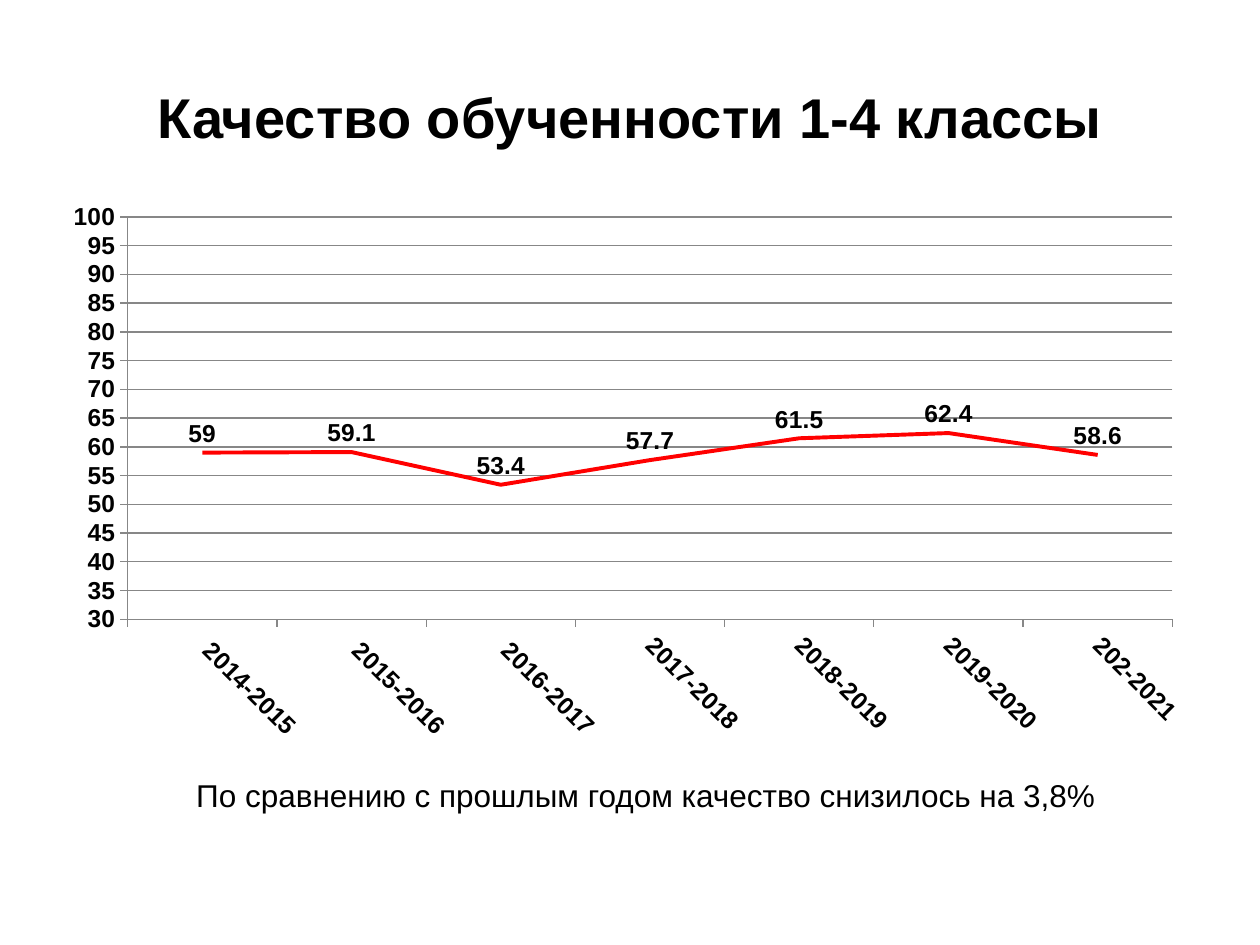
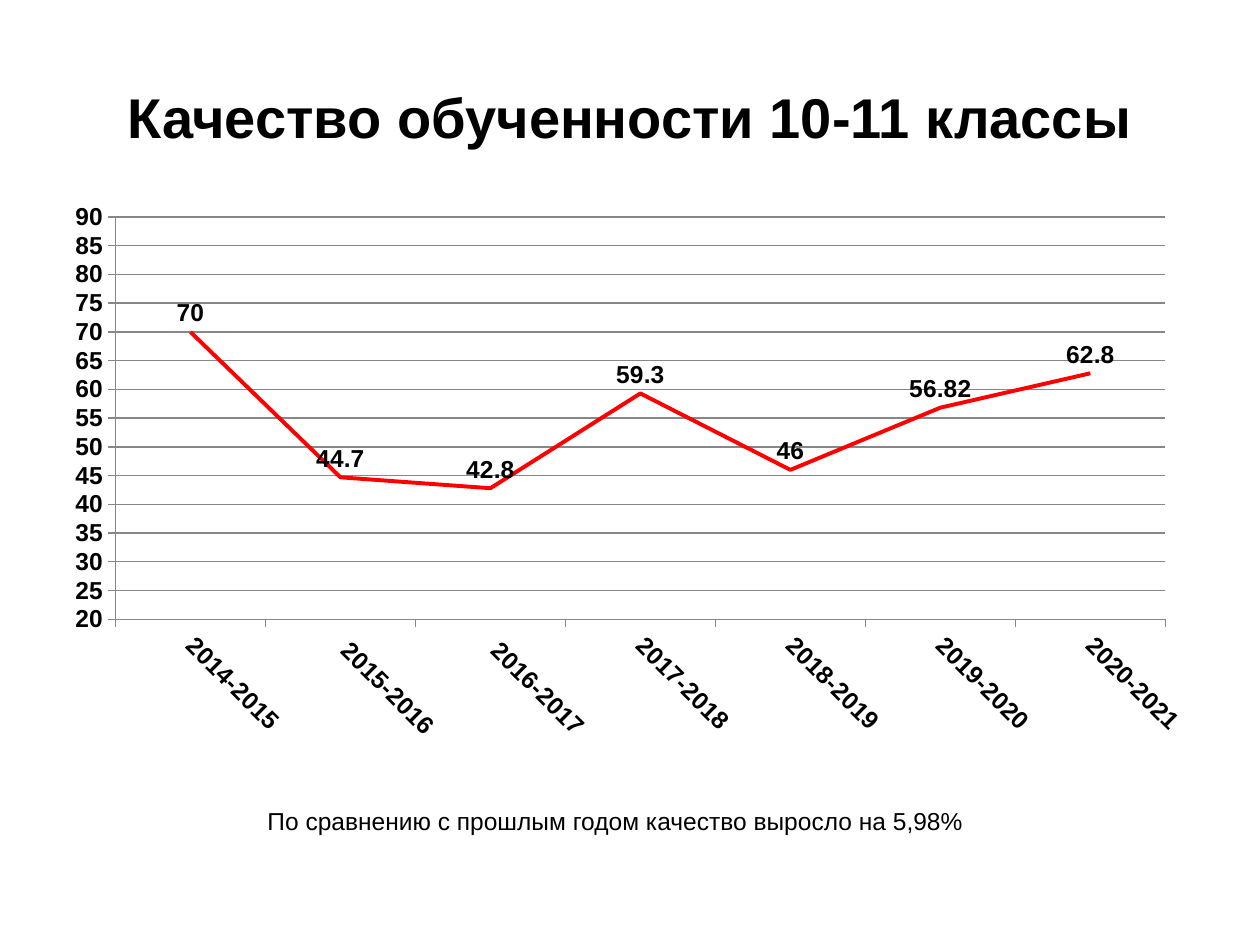
import lxml.etree
import pptx
import pptx.chart.data
import pptx.dml.color
import pptx.enum.chart
import pptx.enum.text
import pptx.oxml
import pptx.oxml.ns
import pptx.util

Pt = pptx.util.Pt
Align = pptx.enum.text.PP_ALIGN
Anchor = pptx.enum.text.MSO_ANCHOR
ChartEnum = pptx.enum.chart

FONT = "Arial"
BLACK, RED, GREY = "000000", "FF0000", "878787"
TITLE_BOX = (36, 21.6, 648, 90)
CHART_BOX = (30, 110, 660, 320)
AXIS_STEP = 5

SLIDES = [
    {
        "title": "Качество обученности 1-4 классы",
        "years": [" 2014-2015", " 2015-2016", " 2016-2017", "2017-2018",
                  "2018-2019", "2019-2020", "202-2021"],
        "quality": [59, 59.1, 53.4, 57.7, 61.5, 62.4, 58.6],
        "scale": (30, 100),
        "plot": (43, 14, 597, 230),
        "note": "По сравнению с прошлым годом качество снизилось на 3,8%",
        "note_box": (105, 440, 536, 73),
        "note_size": 18,
        "note_align": Align.LEFT,
    },
    {
        "title": "Качество обученности 10-11 классы",
        "years": ["2014-2015", " 2015-2016", " 2016-2017", "2017-2018",
                  "2018-2019", "2019-2020", "2020-2021"],
        "quality": [70, 44.7, 42.8, 59.3, 46, 56.82, 62.8],
        "scale": (20, 90),
        "plot": (36, 14, 600, 230),
        "note": "По сравнению с прошлым годом качество выросло на 5,98%",
        "note_box": (121.7, 457.2, 460, 37.4),
        "note_size": 14,
        "note_align": Align.CENTER,
    },
]


def color(value):
    """Turn a hex string into a colour."""
    return pptx.dml.color.RGBColor.from_string(value)


def apply(target, values):
    """Set the attributes of an object from a dict."""
    for name, value in values.items():
        setattr(target, name, value)


def style_font(font, size, bold=False):
    """Give a font the shared face and colour."""
    apply(font, {"name": FONT, "size": Pt(size), "bold": bold})
    font.color.rgb = color(BLACK)


def style_line(line, value, width):
    """Set the colour and width of a line."""
    line.color.rgb = color(value)
    line.width = Pt(width)


def add_text(page, box, text, size, align, bold=False, anchor=Anchor.TOP):
    """Place one paragraph of text in a box."""
    frame = page.shapes.add_textbox(*map(Pt, box)).text_frame
    apply(frame, {"word_wrap": True, "vertical_anchor": anchor})
    para = frame.paragraphs[0]
    para.alignment = align
    span = para.add_run()
    span.text = text
    style_font(span.font, size, bold)


def place_plot(chart, box, plot_box):
    """Fix the inner plot area, given in points within the chart box."""
    area = chart._chartSpace.chart.plotArea
    for old in area.findall(pptx.oxml.ns.qn("c:layout")):
        area.remove(old)
    layout = lxml.etree.Element(pptx.oxml.ns.qn("c:layout"))
    manual = lxml.etree.SubElement(layout, pptx.oxml.ns.qn("c:manualLayout"))
    left, top, width, height = plot_box
    settings = {
        "layoutTarget": "inner", "xMode": "edge", "yMode": "edge",
        "x": left / box[2], "y": top / box[3],
        "w": width / box[2], "h": height / box[3],
    }
    for name, value in settings.items():
        item = lxml.etree.SubElement(manual, pptx.oxml.ns.qn(f"c:{name}"))
        item.set("val", str(value))
    area.insert(0, layout)


def style_axes(chart, scale):
    """Format both axes, the gridlines and the slanted year labels."""
    low, high = scale
    years, values = chart.category_axis, chart.value_axis
    apply(values, {"minimum_scale": low, "maximum_scale": high,
                   "major_unit": AXIS_STEP, "has_major_gridlines": True})
    style_line(values.major_gridlines.format.line, GREY, 0.75)
    for axis in (years, values):
        axis.major_tick_mark = ChartEnum.XL_TICK_MARK.OUTSIDE
        style_font(axis.tick_labels.font, 14, True)
        style_line(axis.format.line, GREY, 0.75)
    slant = years._element.find(".//" + pptx.oxml.ns.qn("a:bodyPr"))
    slant.set("rot", "2700000")
    slant.set("vert", "horz")


def add_quality_chart(page, box, content):
    """Draw the line chart of quality by school year."""
    data = pptx.chart.data.CategoryChartData()
    data.categories = content["years"]
    data.add_series("Series 1", content["quality"])
    chart = page.shapes.add_chart(
        ChartEnum.XL_CHART_TYPE.LINE, *map(Pt, box), data).chart
    apply(chart, {"has_legend": False, "has_title": False})
    style_font(chart.font, 18)
    place_plot(chart, box, content["plot"])
    style_axes(chart, content["scale"])
    plot = chart.plots[0]
    plot.vary_by_categories = False
    series = plot.series[0]
    series.smooth = False
    series.marker.style = ChartEnum.XL_MARKER_STYLE.NONE
    style_line(series.format.line, RED, 2.25)
    labels = series.data_labels
    apply(labels, {"show_value": True,
                   "position": ChartEnum.XL_LABEL_POSITION.ABOVE})
    style_font(labels.font, 14, True)


def add_quality_slide(deck, content):
    """Add a slide with a title, a chart and a note."""
    page = deck.slides.add_slide(deck.slide_layouts[6])
    add_quality_chart(page, CHART_BOX, content)
    add_text(page, TITLE_BOX, content["title"], 32, Align.CENTER, True,
             Anchor.MIDDLE)
    add_text(page, content["note_box"], content["note"],
             content["note_size"], content["note_align"])


def main():
    """Build and save the deck."""
    deck = pptx.Presentation()
    apply(deck, {"slide_width": Pt(720), "slide_height": Pt(540)})
    for content in SLIDES:
        add_quality_slide(deck, content)
    deck.save("out.pptx")


if __name__ == "__main__":
    main()
